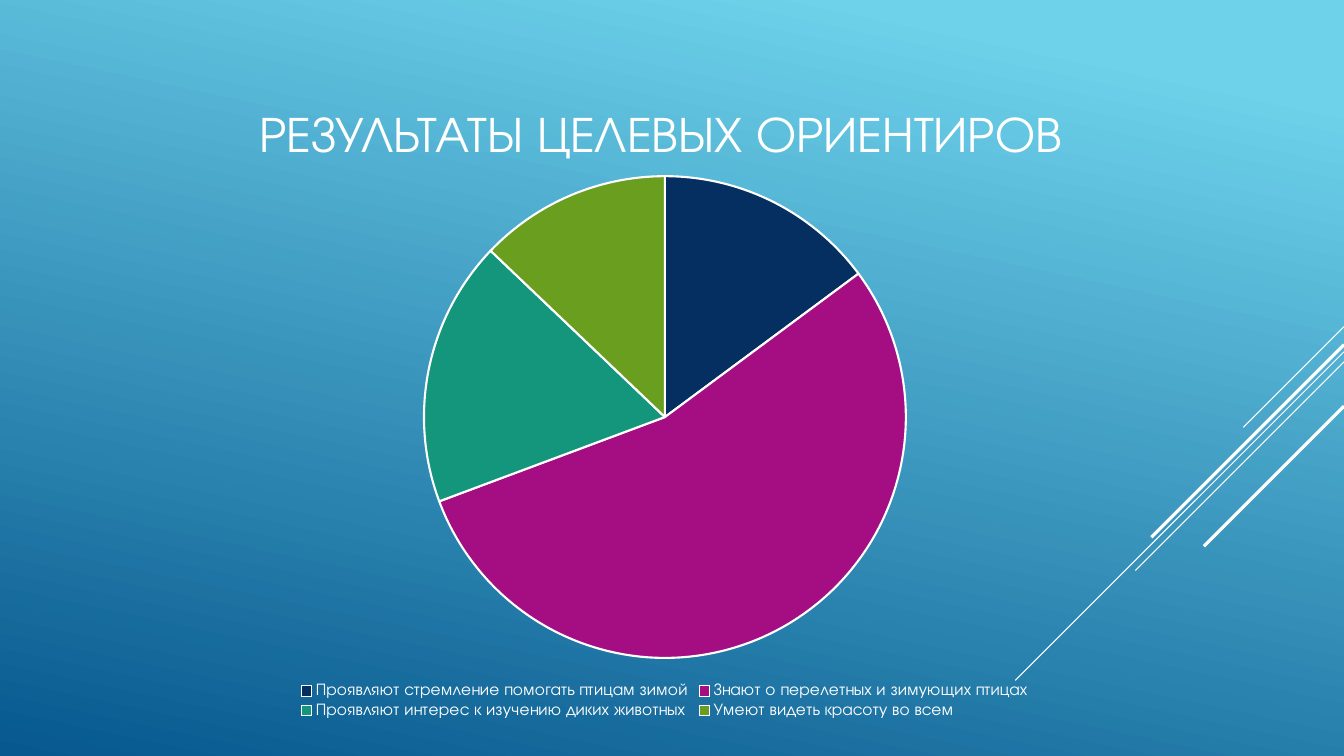
from dataclasses import dataclass

from lxml import etree
from pptx import Presentation
from pptx import util as u
from pptx.chart.data import CategoryChartData
from pptx.dml.color import RGBColor
from pptx.enum import chart as charts
from pptx.enum import shapes, text
from pptx.oxml.ns import qn


@dataclass(frozen=True)
class Theme:
    """Colours, font and type sizes of the slide."""
    font: str = "TeX Gyre Adventor"
    light: str = "FFFFFF"
    sky: str = "6ED2EB"
    deep: str = "06588E"
    slices: tuple = ("052F61", "A50E82", "14967C", "6A9E1F")
    title_size: int = 36
    legend_size: int = 12
    chart_size: int = 10
    thin: float = 0.75
    thick: float = 2.25


THEME = Theme()
WIDTH, HEIGHT = 13.33, 7.5
RESULTS = {
    "Проявляют стремление помогать птицам зимой": 15,
    "Знают о перелетных и зимующих птицах": 55,
    "Проявляют интерес к изучению диких животных": 18,
    "Умеют видеть красоту во всем": 13,
}


def colour(value):
    """Turn a hex string into a colour."""
    return RGBColor.from_string(value)


def style_font(font, size):
    """Give a font the theme's face and light colour."""
    font.name = THEME.font
    font.size = u.Pt(size)
    font.color.rgb = colour(THEME.light)


def add_text(slide, box, content, *, size, align, anchor):
    """Place one formatted line of text in a box."""
    shape = slide.shapes.add_textbox(*map(u.Inches, box))
    frame = shape.text_frame
    frame.word_wrap = True
    frame.vertical_anchor = anchor
    paragraph = frame.paragraphs[0]
    paragraph.alignment = align
    run = paragraph.add_run()
    run.text = content
    style_font(run.font, size)


def paint_background(slide):
    """Fill the background with a slanted two-colour gradient."""
    fill = slide.background.fill
    fill.gradient()
    fill.gradient_angle = 360 - 102
    stops = ((0.1, THEME.sky), (1, THEME.deep))
    for stop, (position, value) in zip(fill.gradient_stops, stops):
        stop.position = position
        stop.color.rgb = colour(value)


def add_diagonals(slide, box):
    """Draw 45-degree lines from the right edge of the box."""
    left, top, width, height = box
    right = left + width
    lines = (
        (0, 1, THEME.thin),
        (0.25, 3.26, THEME.thin),
        (0.35, 2.07, THEME.thin),
        (0.18, 1.91, THEME.thick),
        (0.79, 1.39, THEME.thick),
    )
    for offset, reach, weight in lines:
        start = top + offset
        ends = (right, start, right - reach, start + reach)
        line = slide.shapes.add_connector(
            shapes.MSO_CONNECTOR.STRAIGHT, *map(u.Inches, ends))
        line.line.color.rgb = colour(THEME.light)
        line.line.width = u.Pt(weight)
        etree.SubElement(line._element.spPr, qn("a:effectLst"))


def add_results_pie(slide, box):
    """Place the pie of results with its legend below."""
    data = CategoryChartData()
    data.categories = list(RESULTS)
    data.add_series("Series 1", list(RESULTS.values()))
    chart = slide.shapes.add_chart(
        charts.XL_CHART_TYPE.PIE, *map(u.Inches, box), data).chart
    chart.has_title = False
    style_font(chart.font, THEME.chart_size)
    chart.has_legend = True
    chart.legend.position = charts.XL_LEGEND_POSITION.BOTTOM
    chart.legend.include_in_layout = False
    style_font(chart.legend.font, THEME.legend_size)
    plot = chart.plots[0]
    plot.vary_by_categories = True
    for index, value in enumerate(THEME.slices):
        piece = plot.series[0].points[index].format
        piece.fill.solid()
        piece.fill.fore_color.rgb = colour(value)
        piece.line.color.rgb = colour(THEME.light)
        piece.line.width = u.Pt(1.5)


def build_results_slide(presentation):
    """Assemble the results slide."""
    slide = presentation.slides.add_slide(presentation.slide_layouts[6])
    paint_background(slide)
    add_diagonals(slide, (10.07, 3.24, WIDTH - 10.07, 3.51))
    add_text(slide, (1.89, 0.49, 9.33, 1.65), "РЕЗУЛЬТАТЫ ЦЕЛЕВЫХ ОРИЕНТИРОВ",
             size=THEME.title_size, align=text.PP_ALIGN.CENTER,
             anchor=text.MSO_ANCHOR.MIDDLE)
    add_results_pie(slide, (0.98, 1.61, 11.23, 5.56))


def main():
    """Build and save the presentation."""
    presentation = Presentation()
    presentation.slide_width = u.Inches(WIDTH)
    presentation.slide_height = u.Inches(HEIGHT)
    build_results_slide(presentation)
    presentation.save("out.pptx")


if __name__ == "__main__":
    main()
